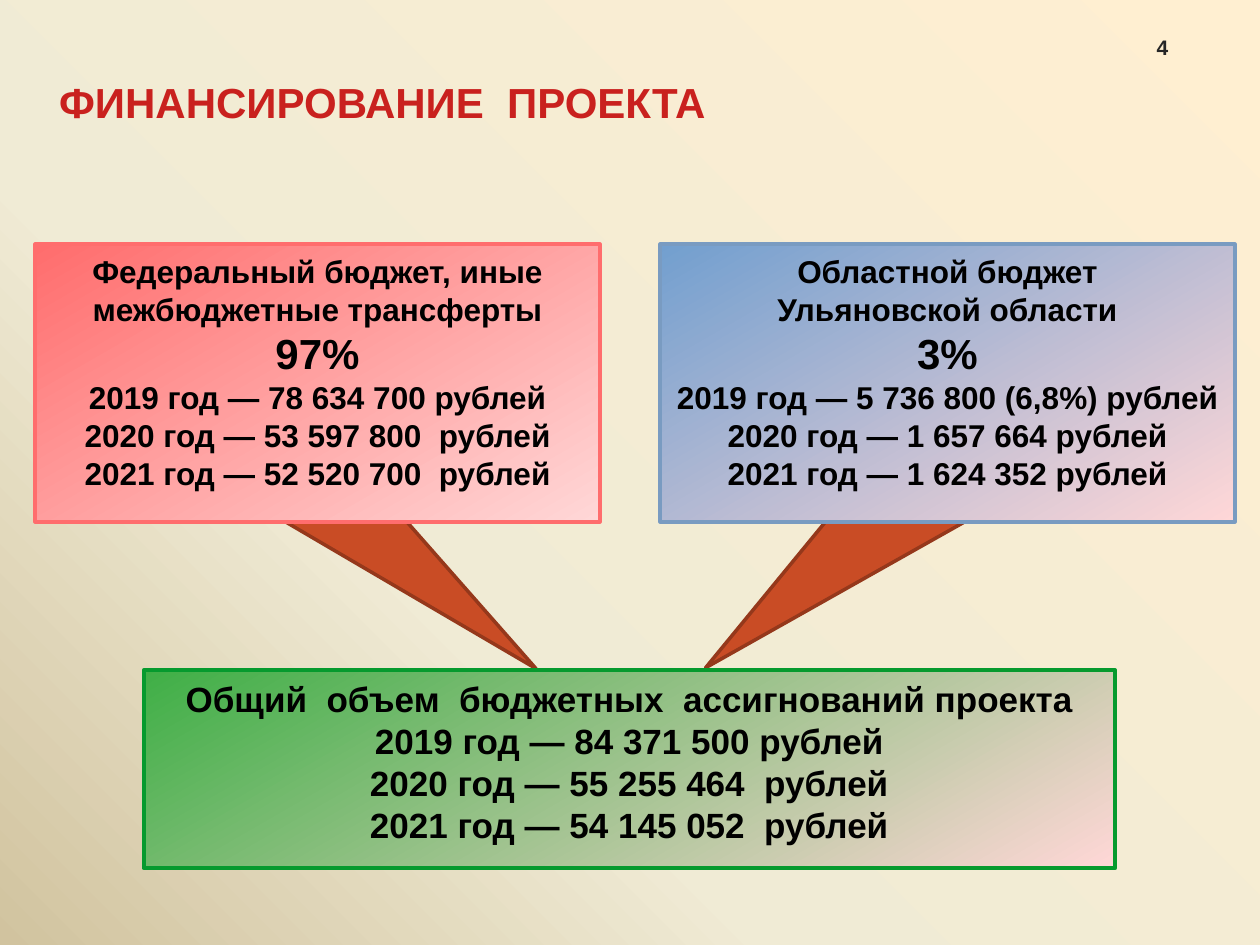
from collections import namedtuple
from copy import deepcopy
from dataclasses import dataclass

from pptx import Presentation
from pptx.dml.color import RGBColor
from pptx.enum.shapes import MSO_SHAPE
from pptx.enum.text import MSO_ANCHOR, PP_ALIGN
from pptx.util import Inches, Pt

RECTANGLE = MSO_SHAPE.RECTANGLE
WEDGE = MSO_SHAPE.FLOWCHART_MERGE
CENTER = PP_ALIGN.CENTER
TOP, BOTTOM = MSO_ANCHOR.TOP, MSO_ANCHOR.BOTTOM
TITLE_ONLY = 5
COLUMNS, ROWS = 100, 75
WIDTH, HEIGHT = Inches(10), Inches(7.5)

Box = namedtuple("Box", "column row columns rows")


@dataclass(frozen=True)
class Theme:
    font: str = "Arial"
    background: tuple = ((0, "FFEFD1"), (0.65, "F0EBD5"), (1, "D1C39F"))
    fade: str = "FFD7D7"
    federal: tuple = ("FF6D6D", "FF6D6D")
    regional: tuple = ("729FCF", "799BC1")
    total: tuple = ("3FAF46", "069A2E")
    wedge: tuple = ("C94C25", "95381B")
    title: str = "C9211E"
    number: str = "262626"
    text: str = "000000"
    large: int = 24
    medium: int = 20
    body: int = 18
    small: int = 12
    frame_line: float = 2.3
    wedge_line: float = 2


THEME = Theme()


def color(value):
    return RGBColor.from_string(value)


def place(box):
    return (
        round(WIDTH * box.column / COLUMNS),
        round(HEIGHT * box.row / ROWS),
        round(WIDTH * box.columns / COLUMNS),
        round(HEIGHT * box.rows / ROWS),
    )


def apply(target, values):
    for name, value in values.items():
        setattr(target, name, value)


def paint_gradient(fill, stops, clockwise):
    fill.gradient()
    fill.gradient_angle = 360 - clockwise
    stop_list = fill._fill._gradFill.gsLst
    for _ in stops[2:]:
        stop_list.append(deepcopy(stop_list[-1]))
    for stop, (position, value) in zip(fill.gradient_stops, stops):
        stop.position = position
        stop.color.rgb = color(value)


def outline(shape, value, width):
    shape.shadow.inherit = False
    shape.line.color.rgb = color(value)
    shape.line.width = Pt(width)


def write(frame, lines, value, anchor=TOP, side=0.1, edge=0.05, wrap=True):
    apply(frame, {
        "word_wrap": wrap,
        "vertical_anchor": anchor,
        "margin_left": Inches(side),
        "margin_right": Inches(side),
        "margin_top": Inches(edge),
        "margin_bottom": Inches(edge),
    })
    for index, (words, size) in enumerate(lines):
        paragraph = frame.add_paragraph() if index else frame.paragraphs[0]
        paragraph.alignment = CENTER
        run = paragraph.add_run()
        run.text = words
        apply(run.font, {"name": THEME.font, "size": Pt(size), "bold": True})
        run.font.color.rgb = color(value)


def add_heading(slide, box):
    title = slide.shapes.title
    apply(title, dict(zip(("left", "top", "width", "height"), place(box))))
    write(title.text_frame, [("ФИНАНСИРОВАНИЕ  ПРОЕКТА", THEME.large)],
          THEME.title, wrap=False)


def add_page_number(slide, box):
    number = slide.shapes.add_textbox(*place(box))
    write(number.text_frame, [("4", THEME.small)], THEME.number, BOTTOM)


def add_wedge(slide, box, rotation):
    wedge = slide.shapes.add_shape(WEDGE, *place(box))
    fill, line = THEME.wedge
    wedge.rotation = rotation
    wedge.fill.solid()
    wedge.fill.fore_color.rgb = color(fill)
    outline(wedge, line, THEME.wedge_line)


def add_budget(slide, box, palette, lines):
    budget = slide.shapes.add_shape(RECTANGLE, *place(box))
    start, line = palette
    paint_gradient(budget.fill, ((0, start), (1, THEME.fade)), 60)
    outline(budget, line, THEME.frame_line)
    write(budget.text_frame, lines, THEME.text, side=0.11, edge=0.06)


def source_lines(names, share, years):
    return (
        [(name, THEME.body) for name in names]
        + [(share, THEME.large)]
        + [(year, THEME.body) for year in years]
    )


def main():
    deck = Presentation()
    deck.slide_width, deck.slide_height = WIDTH, HEIGHT
    slide = deck.slides.add_slide(deck.slide_layouts[TITLE_ONLY])
    paint_gradient(slide.background.fill, THEME.background, 135)

    add_wedge(slide, Box(60.6, 33.7, 8.8, 23.5), 50)
    add_wedge(slide, Box(29.8, 34, 7.5, 23.3), 309.5)
    add_page_number(slide, Box(89.5, 1.9, 5.5, 3.3))
    add_heading(slide, Box(2.8, 5.6, 55.1, 5))
    add_budget(slide, Box(2.8, 19.4, 44.8, 22), THEME.federal, source_lines(
        ["Федеральный бюджет, иные межбюджетные трансферты"],
        "97%",
        ["2019 год — 78 634 700 рублей",
         "2020 год — 53 597 800  рублей",
         "2021 год — 52 520 700  рублей"],
    ))
    add_budget(slide, Box(52.4, 19.4, 45.6, 22), THEME.regional, source_lines(
        ["Областной бюджет", "Ульяновской области"],
        "3%",
        ["2019 год — 5 736 800 (6,8%) рублей",
         "2020 год — 1 657 664 рублей",
         "2021 год — 1 624 352 рублей"],
    ))
    total = [
        "Общий  объем  бюджетных  ассигнований проекта",
        "2019 год — 84 371 500 рублей",
        "2020 год — 55 255 464  рублей",
        "2021 год — 54 145 052  рублей",
    ]
    add_budget(slide, Box(11.4, 53.2, 77.1, 15.7), THEME.total,
               [(line, THEME.medium) for line in total])
    deck.save("out.pptx")


if __name__ == "__main__":
    main()
